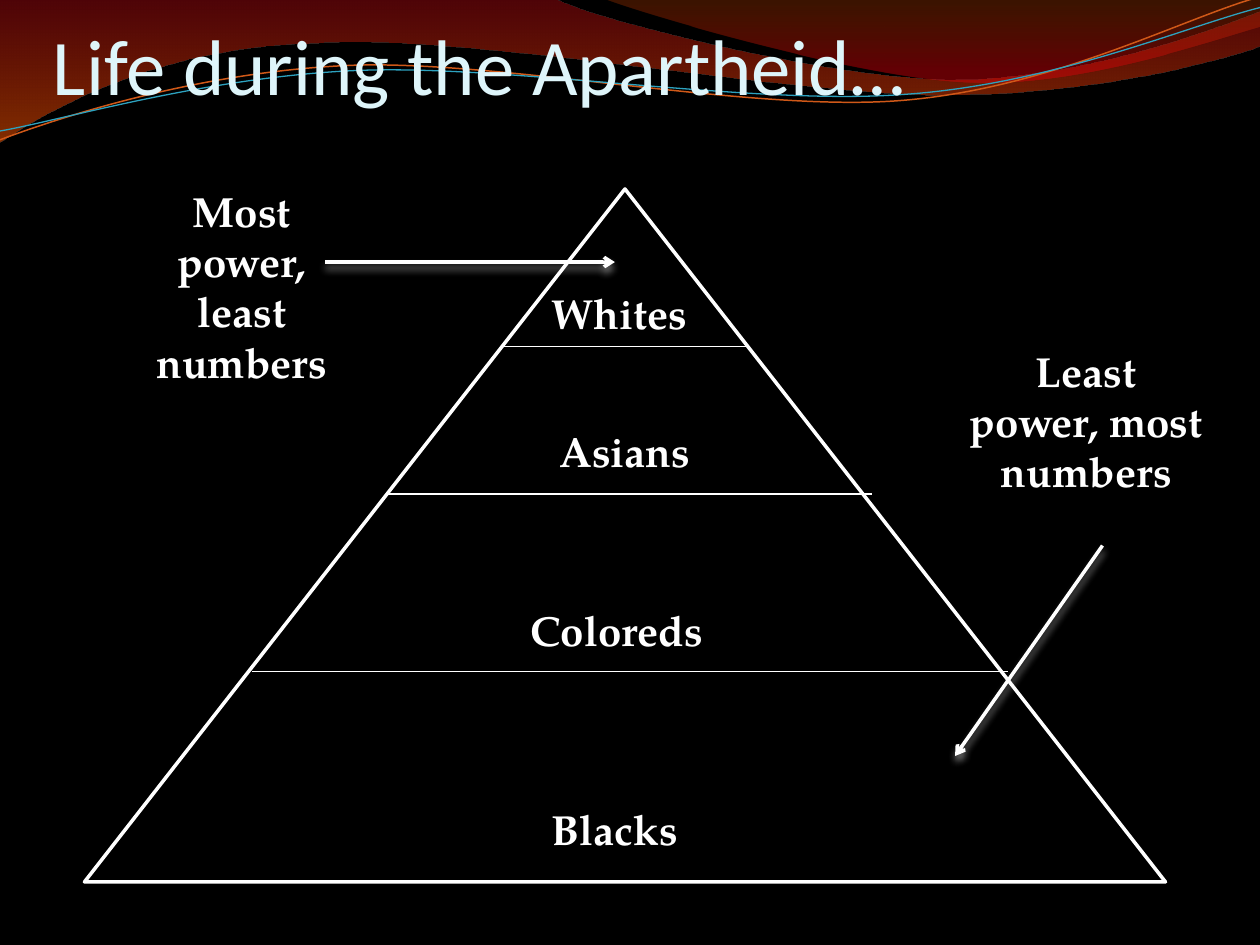
from dataclasses import dataclass

from lxml.etree import SubElement
from pptx import Presentation
from pptx.dml.color import RGBColor
from pptx.enum.shapes import MSO_CONNECTOR, MSO_SHAPE
from pptx.enum.text import MSO_ANCHOR, MSO_AUTO_SIZE, PP_ALIGN
from pptx.oxml.ns import qn
from pptx.util import Pt

PX = 9144  # one hundredth of an inch in EMU

BLACK = RGBColor(0x00, 0x00, 0x00)
WHITE = RGBColor(0xFF, 0xFF, 0xFF)
PALE_CYAN = RGBColor(0xDE, 0xF5, 0xFA)
CRIMSON = RGBColor(0xAF, 0x09, 0x11)
ORANGE = RGBColor(0xEE, 0x53, 0x00)
RUST = RGBColor(0xC2, 0x44, 0x00)
RED = RGBColor(0xDC, 0x00, 0x0B)
COPPER = RGBColor(0xCF, 0x58, 0x18)
TEAL = RGBColor(0x2D, 0xA2, 0xBF)

TITLE_FONT = "Calibri"
LABEL_FONT = "TeX Gyre Pagella"


@dataclass
class Stop:
    position: float
    color: RGBColor
    opacity: int


@dataclass
class Wave:
    """A start point, then steps of 2 numbers (line) or 6 (cubic curve)."""
    start: tuple[int, int]
    steps: list[tuple[int, ...]]
    stops: tuple[Stop, ...] = ()
    line_color: RGBColor | None = None
    line_width: float = 0


@dataclass
class Line:
    start: tuple[int, int]
    end: tuple[int, int]
    width: float = 0.75
    arrow: bool = False


@dataclass
class Label:
    text: str
    left: int
    top: int
    width: int
    height: int = 50


WAVES = [
    Wave((0, 0), [(440, -1), (476, 17, 664, 63, 758, 63), (853, 63, 958, 26, 1000, 9),
                  (1001, 36), (983, 44, 870, 76, 746, 75), (622, 75, 382, 28, 257, 34),
                  (129, 36, 46, 83, -1, 113)],
         stops=(Stop(0, CRIMSON, 45), Stop(1, ORANGE, 55))),
    Wave((479, -1), [(509, 11, 682, 62, 769, 65), (856, 69, 961, 32, 1000, 21), (1000, 0)],
         stops=(Stop(0, RUST, 30), Stop(0.8, RED, 45))),
    Wave((0, 111), [(48, 93, 158, 57, 277, 52), (395, 47, 593, 89, 713, 80),
                    (833, 71, 938, 15, 998, -2)], line_color=COPPER, line_width=0.85),
    Wave((0, 104), [(47, 96, 164, 61, 283, 56), (403, 51, 597, 84, 717, 75),
                    (836, 67, 941, 21, 1000, 6)], line_color=TEAL, line_width=0.75),
]
LINES = [
    Line((400, 275), (592, 275)),
    Line((308, 392), (692, 392)),
    Line((200, 533), (800, 533)),
    Line((258, 208), (488, 208), 2, arrow=True),
    Line((875, 433), (758, 600), 2, arrow=True),
]
LABELS = [
    Label("Whites", 408, 223, 167),
    Label("Asians", 367, 333, 258),
    Label("Coloreds", 352, 475, 275),
    Label("Blacks", 367, 633, 242),
    Label("Most power, least numbers", 92, 142, 200, 131),
    Label("Least power, most numbers", 758, 269, 208, 131),
]


def bend_outline(shape, steps: list[tuple[int, ...]]) -> None:
    """Join each three straight segments that stand for a curve into one."""
    segments = iter(list(shape._element.iter(qn("a:lnTo"))))
    for step in steps:
        segment = next(segments)
        if len(step) == 6:
            curve = segment.makeelement(qn("a:cubicBezTo"))
            segment.addprevious(curve)
            for part in (segment, next(segments), next(segments)):
                curve.append(part[0])
                part.getparent().remove(part)


def draw_wave(page, wave: Wave) -> None:
    points = [(step[i] * PX, step[i + 1] * PX)
              for step in wave.steps for i in range(0, len(step), 2)]
    builder = page.shapes.build_freeform(*(value * PX for value in wave.start))
    builder.add_line_segments(points, close=bool(wave.stops))
    shape = builder.convert_to_shape()
    bend_outline(shape, wave.steps)
    shape.shadow.inherit = False
    if wave.stops:
        shape.line.fill.background()
        shape.fill.gradient()
        shape.fill.gradient_angle = 270
        elements = shape._element.spPr.iter(qn("a:gs"))
        for stop, plan, element in zip(shape.fill.gradient_stops, wave.stops, elements):
            stop.position = plan.position
            stop.color.rgb = plan.color
            SubElement(element[0], qn("a:alpha"), val=str(plan.opacity * 1000))
    else:
        shape.fill.background()
        shape.line.color.rgb = wave.line_color
        shape.line.width = Pt(wave.line_width)


def draw_line(page, line: Line) -> None:
    connector = page.shapes.add_connector(
        MSO_CONNECTOR.STRAIGHT, *(value * PX for value in line.start + line.end))
    connector.line.color.rgb = WHITE
    connector.line.width = Pt(line.width)
    properties = connector._element.spPr
    effects = SubElement(properties, qn("a:effectLst"))
    if line.arrow:
        SubElement(properties.find(qn("a:ln")), qn("a:tailEnd"), type="arrow")
        shadow = SubElement(effects, qn("a:outerShdw"), blurRad=str(Pt(4.5)),
                            dist=str(Pt(3)), dir="5400000", rotWithShape="0")
        color = SubElement(shadow, qn("a:srgbClr"), val=str(WHITE))
        SubElement(color, qn("a:alpha"), val="48000")


def draw_label(page, label: Label) -> None:
    box = page.shapes.add_textbox(label.left * PX, label.top * PX,
                                  label.width * PX, label.height * PX)
    frame = box.text_frame
    frame.word_wrap = True
    frame.auto_size = MSO_AUTO_SIZE.SHAPE_TO_FIT_TEXT
    frame.text = label.text
    para = frame.paragraphs[0]
    para.alignment = PP_ALIGN.CENTER
    para.font.name = LABEL_FONT
    para.font.size = Pt(24)
    para.font.bold = True
    para.font.color.rgb = WHITE


def draw_title(page, text: str) -> None:
    title = page.shapes.title
    title.left, title.top, title.width, title.height = (
        value * PX for value in (42, 16, 900, 72))
    frame = title.text_frame
    frame.text = text
    frame.auto_size = MSO_AUTO_SIZE.NONE
    frame.vertical_anchor = MSO_ANCHOR.BOTTOM
    frame.margin_left = frame.margin_right = frame.margin_bottom = 0
    para = frame.paragraphs[0]
    para.alignment = PP_ALIGN.LEFT
    para.font.name = TITLE_FONT
    para.font.size = Pt(45)
    para.font.color.rgb = PALE_CYAN
    page.shapes._spTree.append(title._element)  # in front of the waves


def draw_pyramid(page) -> None:
    pyramid = page.shapes.add_shape(
        MSO_SHAPE.ISOSCELES_TRIANGLE, *(value * PX for value in (67, 150, 858, 550)))
    pyramid.shadow.inherit = False
    pyramid.fill.solid()
    pyramid.fill.fore_color.rgb = BLACK
    pyramid.line.color.rgb = WHITE
    pyramid.line.width = Pt(2)


def main() -> None:
    deck = Presentation()
    deck.slide_width, deck.slide_height = 1000 * PX, 750 * PX
    page = deck.slides.add_slide(deck.slide_layouts[5])
    page.background.fill.solid()
    page.background.fill.fore_color.rgb = BLACK
    for wave in WAVES:
        draw_wave(page, wave)
    draw_title(page, "Life during the Apartheid…")
    draw_pyramid(page)
    for line in LINES:
        draw_line(page, line)
    for label in LABELS:
        draw_label(page, label)
    deck.save("out.pptx")


if __name__ == "__main__":
    main()
